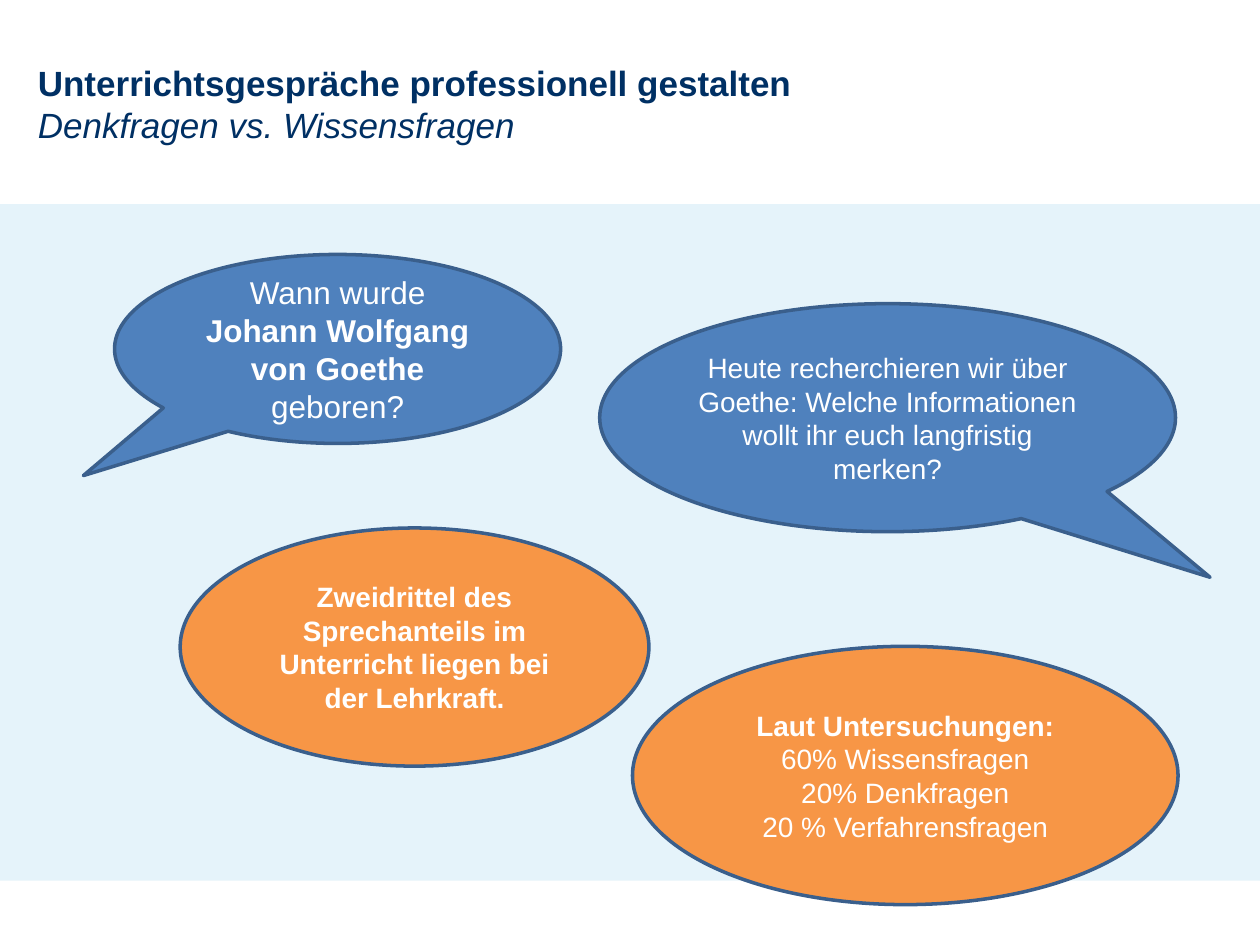
import pptx
import pptx.dml.color
import pptx.enum.shapes
import pptx.enum.text
import pptx.oxml.ns
import pptx.util
from lxml import etree

Inches = pptx.util.Inches
RGBColor = pptx.dml.color.RGBColor
SHAPE = pptx.enum.shapes.MSO_SHAPE
ALIGN = pptx.enum.text.PP_ALIGN
ANCHOR = pptx.enum.text.MSO_ANCHOR

NAVY = RGBColor(0x00, 0x30, 0x64)
SKY = RGBColor(0x00, 0x8C, 0xCF)
BLUE = RGBColor(0x4F, 0x81, 0xBD)
EDGE = RGBColor(0x3A, 0x5F, 0x8C)
ORANGE = RGBColor(0xF7, 0x96, 0x46)
WHITE = RGBColor(0xFF, 0xFF, 0xFF)


def style(font, size, color):
    """Set the typeface, size and colour of a font."""
    font.name = "Arial"
    font.size = pptx.util.Pt(size)
    font.color.rgb = color


def add_title(slide, box):
    """Fill the title placeholder with a bold heading and an italic subtitle."""
    title = slide.shapes.title
    title.left, title.top, title.width, title.height = map(Inches, box)
    frame = title.text_frame
    frame.text = "Unterrichtsgespräche professionell gestalten\nDenkfragen vs. Wissensfragen"
    frame.word_wrap = True
    frame.auto_size = pptx.enum.text.MSO_AUTO_SIZE.NONE
    frame.vertical_anchor = ANCHOR.TOP
    for para in frame.paragraphs:
        para.alignment = ALIGN.LEFT
        style(para.font, 20, NAVY)
    head, sub = frame.paragraphs
    head.font.bold = True
    sub.font.italic = True


def add_band(slide, box):
    """Add the pale band behind the bubbles."""
    band = slide.shapes.add_shape(SHAPE.RECTANGLE, *map(Inches, box))
    band.shadow.inherit = False
    band.line.fill.background()
    band.fill.solid()
    band.fill.fore_color.rgb = SKY
    qn = pptx.oxml.ns.qn
    tint = band.fill._xPr.find(qn("a:solidFill")).find(qn("a:srgbClr"))
    etree.SubElement(tint, qn("a:alpha")).set("val", "10000")


def add_bubble(slide, box, lines, fill, size=16, tail=None):
    """Add an ellipse, with a tail if given; lines hold (text, bold) runs."""
    kind = SHAPE.OVAL_CALLOUT if tail else SHAPE.OVAL
    bubble = slide.shapes.add_shape(kind, *map(Inches, box))
    for index, value in enumerate(tail or ()):
        bubble.adjustments[index] = value
    bubble.shadow.inherit = False
    bubble.fill.solid()
    bubble.fill.fore_color.rgb = fill
    bubble.line.color.rgb = EDGE
    bubble.line.width = pptx.util.Pt(2)
    frame = bubble.text_frame
    frame.word_wrap = True
    frame.vertical_anchor = ANCHOR.MIDDLE
    for index, runs in enumerate(lines):
        para = frame.add_paragraph() if index else frame.paragraphs[0]
        para.alignment = ALIGN.CENTER
        style(para.font, size, WHITE)
        for text, bold in runs:
            run = para.add_run()
            run.text = text
            run.font.bold = bold


def main():
    """Build the slide and save it."""
    deck = pptx.Presentation()
    deck.slide_width, deck.slide_height = Inches(10), Inches(7.5)
    slide = deck.slides.add_slide(deck.slide_layouts[5])

    add_band(slide, (0, 1.62, 10, 5.37))
    add_title(slide, (0.2, 0.44, 6.54, 0.77))
    add_bubble(
        slide, (0.91, 2.02, 3.54, 1.5),
        [[("Wann wurde ", False), ("Johann Wolfgang von Goethe", True), (" geboren?", False)]],
        BLUE, size=18, tail=(-0.57, 0.67))
    add_bubble(
        slide, (4.76, 2.41, 4.57, 1.81),
        [[("Heute recherchieren wir über Goethe: Welche Informationen "
           "wollt ihr euch langfristig merken?", False)]],
        BLUE, tail=(0.56, 0.7))
    add_bubble(
        slide, (5.02, 5.13, 4.33, 2.05),
        [[("Laut Untersuchungen:", True)],
         [("60% Wissensfragen", False)],
         [("20% Denkfragen", False)],
         [("20 % Verfahrensfragen", False)]],
        ORANGE)
    add_bubble(
        slide, (1.43, 4.19, 3.72, 1.89),
        [[("Zweidrittel des Sprechanteils im Unterricht liegen bei der Lehrkraft.", True)]],
        ORANGE)

    deck.save("out.pptx")


if __name__ == "__main__":
    main()
